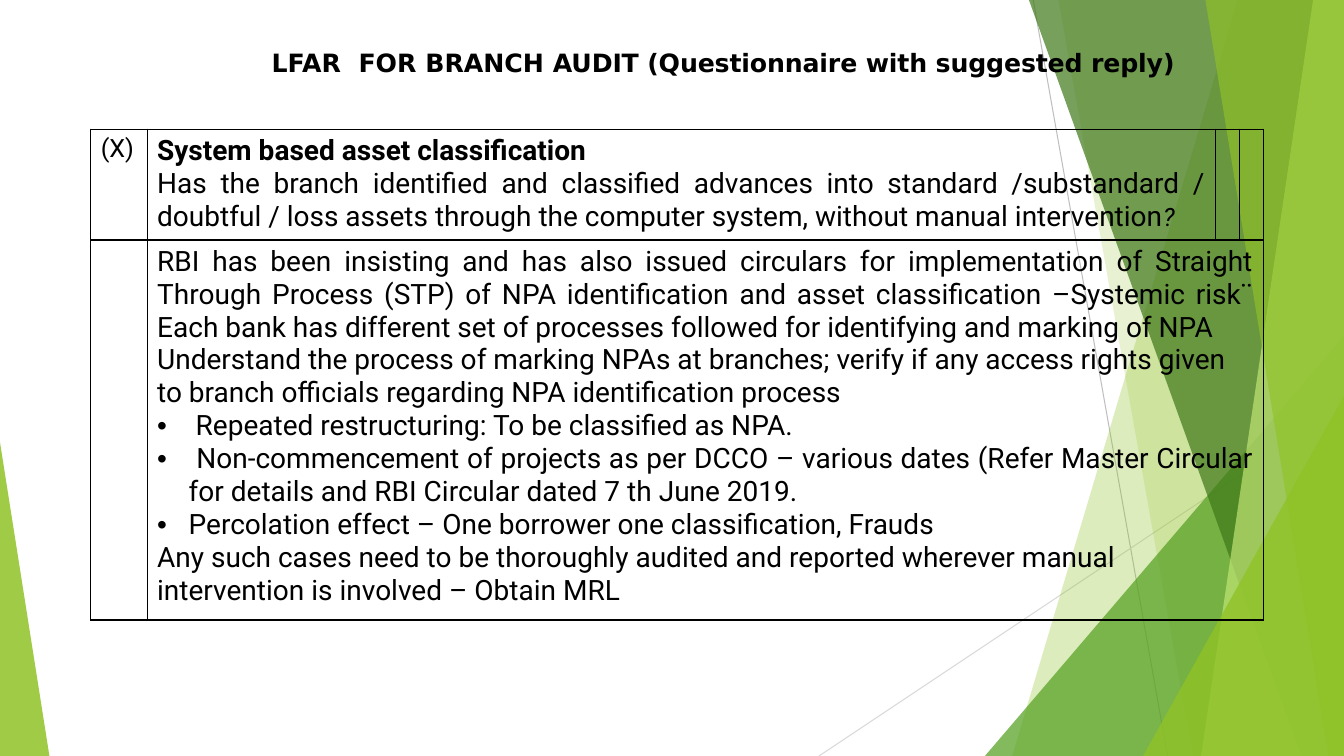
from lxml.etree import SubElement as Sub
from pptx import Presentation
from pptx.dml.color import RGBColor as Rgb
from pptx.enum.shapes import MSO_CONNECTOR as Conn, MSO_SHAPE as Kind
from pptx.enum.text import PP_ALIGN as Align
from pptx.oxml.ns import qn
from pptx.util import Pt

HUES = {
    "ink": "000000", "line": "BFBFBF", "pale": "D9D9D9", "lime": "90C226",
    "leaf": "54A021", "pine": "3F7819", "mint": "C0E474",
}
WIDE, HIGH = 960, 540


def write(para, text, font="Roboto", size=20, bold=False, slant=False,
          hue="ink", track=0, align=None, hang=0):
    run = para.add_run()
    run.text = text
    run.font.name = font
    run.font.size = Pt(size)
    run.font.bold = bold
    run.font.italic = slant
    run.font.color.rgb = Rgb.from_string(HUES[hue])
    if track:
        run.font._element.set("spc", str(round(track * 100)))
    if align is not None:
        para.alignment = align
    if hang:
        props = para._p.get_or_add_pPr()
        props.set("marL", str(Pt(hang)))
        props.set("indent", str(-Pt(hang)))
        Sub(props, qn("a:buFont"), typeface="Arial")
        Sub(props, qn("a:buChar"), char="•")


class Deck:
    def __init__(self):
        self.show = Presentation()
        self.show.slide_width = Pt(WIDE)
        self.show.slide_height = Pt(HIGH)
        self.slide = self.show.slides.add_slide(self.show.slide_layouts[6])
        self.shapes = self.slide.shapes

    def line(self, x1, y1, x2, y2, hue):
        link = self.shapes.add_connector(
            Conn.STRAIGHT, Pt(x1), Pt(y1), Pt(x2), Pt(y2))
        link.line.width = Pt(0.75)
        link.line.color.rgb = Rgb.from_string(HUES[hue])
        Sub(link._element.spPr, qn("a:effectLst"))

    def tint(self, shape, hue, alpha):
        shape.shadow.inherit = False
        shape.line.fill.background()
        shape.fill.solid()
        shape.fill.fore_color.rgb = Rgb.from_string(HUES[hue])
        color = shape._element.spPr.find(qn("a:solidFill"))[0]
        Sub(color, qn("a:alpha"), val=str(alpha * 1000))

    def band(self, top, foot, hue, alpha):
        form = self.shapes.build_freeform(Pt(top), 0)
        form.add_line_segments(
            [(Pt(WIDE), 0), (Pt(WIDE), Pt(HIGH)), (Pt(foot), Pt(HIGH))])
        self.tint(form.convert_to_shape(), hue, alpha)

    def wedge(self, left, top, width, peak, hue, alpha):
        shape = self.shapes.add_shape(
            Kind.ISOSCELES_TRIANGLE, Pt(left), Pt(top), Pt(width), Pt(HIGH - top))
        shape.adjustments[0] = peak
        self.tint(shape, hue, alpha)

    def title(self, left, top, width, height, parts):
        frame = self.shapes.add_textbox(
            Pt(left), Pt(top), Pt(width), Pt(height)).text_frame
        frame.word_wrap = True
        frame.margin_left = frame.margin_top = frame.margin_bottom = 0
        frame.margin_right = Pt(18)
        para = frame.paragraphs[0]
        para.space_before = Pt(4.2)
        for text, track in parts:
            write(para, text, font="DejaVu Sans", size=18, bold=True,
                  track=track, align=Align.CENTER)

    def grid(self, left, top, cols, rows):
        table = self.shapes.add_table(
            len(rows), len(cols), Pt(left), Pt(top),
            Pt(sum(cols)), Pt(sum(rows))).table
        table.first_row = table.horz_banding = False
        for col, width in zip(table.columns, cols):
            col.width = Pt(width)
        for row, height in zip(table.rows, rows):
            row.height = Pt(height)
        for cell in table.iter_cells():
            self.frame(cell)
        return table

    def frame(self, cell):
        props = cell._tc.get_or_add_tcPr()
        for side in ("lnL", "lnR", "lnT", "lnB"):
            edge = Sub(props, qn("a:" + side), w=str(Pt(1)))
            Sub(Sub(edge, qn("a:solidFill")), qn("a:srgbClr"), val=HUES["ink"])
        cell.fill.background()

    def fill(self, cell, paras):
        frame = cell.text_frame
        for spot, runs in enumerate(paras):
            para = frame.add_paragraph() if spot else frame.paragraphs[0]
            for text, style in runs:
                write(para, text, **style)


def main():
    deck = Deck()
    deck.line(738, 0, 834, HIGH, "line")
    deck.line(WIDE, 290, 585, HIGH, "pale")
    deck.band(884, 723, "lime", 30)
    deck.band(756, 852, "lime", 20)
    deck.wedge(703.5, 240, 256.5, 1, "leaf", 72)
    deck.band(735, 929.5, "pine", 70)
    deck.band(938, 858, "mint", 70)
    deck.band(861, 949, "lime", 65)
    deck.wedge(816.5, 283, 143.5, 1, "lime", 80)
    deck.wedge(0, 316, 35.3, 0, "lime", 85)
    deck.title(152, 33.8, 747, 28.8, [
        ("LFAR  FOR BRANCH ", 0),
        ("AUDIT (Questionnaire with suggested reply)", -0.1),
    ])

    table = deck.grid(64.8, 92.2, [40.3, 763.2, 16.6, 9.4], [79.2, 271.4])
    table.cell(1, 1).merge(table.cell(1, 3))
    body = {"align": Align.JUSTIFY}
    item = {**body, "hang": 22.5}
    deck.fill(table.cell(0, 0), [[("(X)", {"size": 18})]])
    deck.fill(table.cell(0, 1), [
        [("System based asset classification", {**body, "bold": True})],
        [("Has the branch identified and classified advances into standard "
          "/substandard / doubtful / loss assets through the computer system, "
          "without manual intervention", body),
         ("?", {**body, "size": 18, "slant": True})],
    ])
    notes = [
        ("RBI has been insisting and has also issued circulars for "
         "implementation of Straight Through Process (STP) of NPA "
         "identification and asset classification –Systemic risk¨ Each bank "
         "has different set of processes followed for identifying and marking "
         "of NPA", body),
        ("Understand the process of marking NPAs at branches; verify if any "
         "access rights given", body),
        ("to branch officials regarding NPA identification process", body),
        (" Repeated restructuring: To be classified as NPA.", item),
        (" Non-commencement of projects as per DCCO – various dates (Refer "
         "Master Circular for details and RBI Circular dated 7 th June 2019.",
         item),
        ("Percolation effect – One borrower one classification, Frauds", item),
        ("Any such cases need to be thoroughly audited and reported wherever "
         "manual", body),
        ("intervention is involved – Obtain MRL", body),
    ]
    deck.fill(table.cell(1, 1), [[note] for note in notes])
    deck.show.save("out.pptx")


if __name__ == "__main__":
    main()
